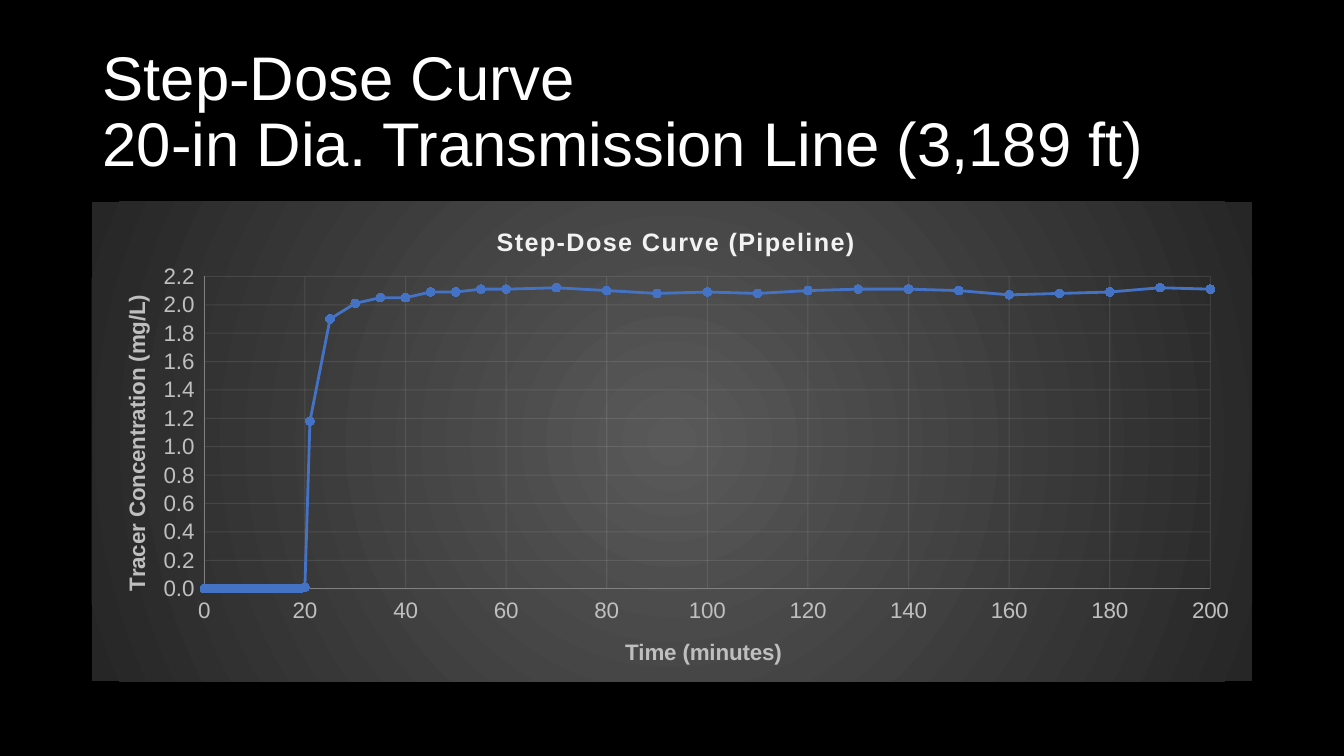
from lxml import etree
from pptx import Presentation
from pptx.chart.data import XyChartData
from pptx.dml.color import RGBColor
from pptx.enum.chart import XL_CHART_TYPE, XL_MARKER_STYLE, XL_TICK_LABEL_POSITION, XL_TICK_MARK
from pptx.enum.text import MSO_ANCHOR
from pptx.oxml import parse_xml
from pptx.oxml.ns import nsdecls, qn
from pptx.util import Inches, Pt

SCATTER = XL_CHART_TYPE.XY_SCATTER_LINES
CIRCLE = XL_MARKER_STYLE.CIRCLE
LOW = XL_TICK_LABEL_POSITION.LOW
NO_TICK = XL_TICK_MARK.NONE
MIDDLE = MSO_ANCHOR.MIDDLE


def set_font(font, color, **values):
    font.name = "Arial"
    font.color.rgb = RGBColor.from_string(color)
    for name, value in values.items():
        setattr(font, name, value)


def make_layout(x, y, w=None, h=None):
    """Return a manual chart layout in shares of the chart's size."""
    inner = '<c:layoutTarget val="inner"/>' if w else ""
    size = f'<c:w val="{w}"/><c:h val="{h}"/>' if w else ""
    return parse_xml(
        f'<c:layout {nsdecls("c")}><c:manualLayout>{inner}'
        f'<c:xMode val="edge"/><c:yMode val="edge"/>'
        f'<c:x val="{x}"/><c:y val="{y}"/>{size}</c:manualLayout></c:layout>')


prs = Presentation()
prs.slide_width, prs.slide_height = Inches(13.33), Inches(7.5)
slide = prs.slides.add_slide(prs.slide_layouts[6])
slide.background.fill.solid()
slide.background.fill.fore_color.rgb = RGBColor.from_string("000000")

# Heading
tf = slide.shapes.add_textbox(Inches(0.92), Inches(0.4), Inches(11.5), Inches(1.45)).text_frame
tf.word_wrap = True
tf.vertical_anchor = MIDDLE
p = tf.paragraphs[0]
p.text = "Step-Dose Curve \v20-in Dia. Transmission Line (3,189 ft)"
p.line_spacing = 0.9
p.space_after = Pt(6)
for r in p.runs:
    set_font(r.font, "FFFFFF", size=Pt(44))

# Tracer data: no tracer until minute 20, then the step
minutes = [*range(11), 10, 11, 12, 12, 12, 13, 14, 14, *range(15, 22),
           *range(25, 60, 5), *range(60, 201, 10)]
step = [0.01, 1.18, 1.9, 2.01, 2.05, 2.05, 2.09, 2.09, 2.11, 2.11, 2.12, 2.1,
        2.08, 2.09, 2.08, 2.1, 2.11, 2.11, 2.1, 2.07, 2.08, 2.09, 2.12, 2.11]
tracer = [0] * (len(minutes) - len(step)) + step
data = XyChartData()
points = data.add_series("Series 1")
for minute, dose in zip(minutes, tracer):
    points.add_data_point(minute, dose)
chart = slide.shapes.add_chart(SCATTER, Inches(0.91), Inches(2), Inches(11.51),
                               Inches(4.76), data).chart
chart.has_legend = False
set_font(chart.font, "FFFFFF", size=Pt(10))

series = chart.plots[0].series[0]
chart.plots[0].vary_by_categories = False
series.smooth = False
series.format.line.width = Pt(2)
series.format.line.color.rgb = RGBColor.from_string("4472C4")
series.marker.style = CIRCLE
series.marker.size = 6
marker = series.marker.format
marker.fill.solid()
marker.fill.fore_color.rgb = RGBColor.from_string("4472C4")
marker.line.color.rgb = RGBColor.from_string("4472C4")

# Axes
axes = [(chart.category_axis, 200, 20, "0", "Time (minutes)"),
        (chart.value_axis, 2.2, 0.2, "#,##0.0", "Tracer Concentration (mg/L)")]
for axis, top, unit, number_format, text in axes:
    settings = {"minimum_scale": 0, "maximum_scale": top, "major_unit": unit,
                "major_tick_mark": NO_TICK, "minor_tick_mark": NO_TICK,
                "tick_label_position": LOW, "has_major_gridlines": True}
    for name, value in settings.items():
        setattr(axis, name, value)
    axis.tick_labels.number_format = number_format
    axis.tick_labels.number_format_is_linked = False
    set_font(axis.tick_labels.font, "BFBFBF", size=Pt(16))
    axis.axis_title.text_frame.text = text
    for line, color in ((axis.format.line, "808080"),
                        (axis.major_gridlines.format.line, "F2F2F2")):
        line.width = Pt(0.75)
        line.color.rgb = RGBColor.from_string(color)
    grid_color = axis.major_gridlines._xAx.find(qn("c:majorGridlines")).find(".//" + qn("a:srgbClr"))
    etree.SubElement(grid_color, qn("a:alpha")).set("val", "10000")

# Titles and plot area
chart.chart_title.text_frame.text = "Step-Dose Curve (Pipeline)"
titles = [(chart.chart_title, "F2F2F2", 18, 0.345, 0.04),
          (chart.category_axis.axis_title, "BFBFBF", 16, 0.456, 0.9),
          (chart.value_axis.axis_title, "BFBFBF", 16, 0.023, 0.186)]
for title, color, size, x, y in titles:
    r = title.text_frame.paragraphs[0].runs[0]
    set_font(r.font, color, size=Pt(size), bold=True)
    element = title._element
    for old in element.findall(qn("c:layout")):
        element.remove(old)
    element.find(qn("c:tx")).addnext(make_layout(x, y))
    title_overlay = element.find(qn("c:overlay"))
    if title_overlay is not None:
        title_overlay.set("val", "0")
chart.chart_title.text_frame.paragraphs[0].runs[0].font._element.set("spc", "100")

plot_area = chart._chartSpace.chart.plotArea
for old in plot_area.findall(qn("c:layout")):
    plot_area.remove(old)
plot_area.insert(0, make_layout(0.097, 0.156, 0.867, 0.651))

chart._chartSpace.chart.addnext(parse_xml(
    f'<c:spPr {nsdecls("c", "a")}><a:gradFill><a:gsLst>'
    '<a:gs pos="0"><a:srgbClr val="595959"/></a:gs>'
    '<a:gs pos="100000"><a:srgbClr val="262626"/></a:gs></a:gsLst>'
    '<a:path path="circle"><a:fillToRect l="50000" t="50000" r="50000" b="50000"/></a:path>'
    '</a:gradFill><a:ln><a:noFill/></a:ln></c:spPr>'))

prs.save("out.pptx")
